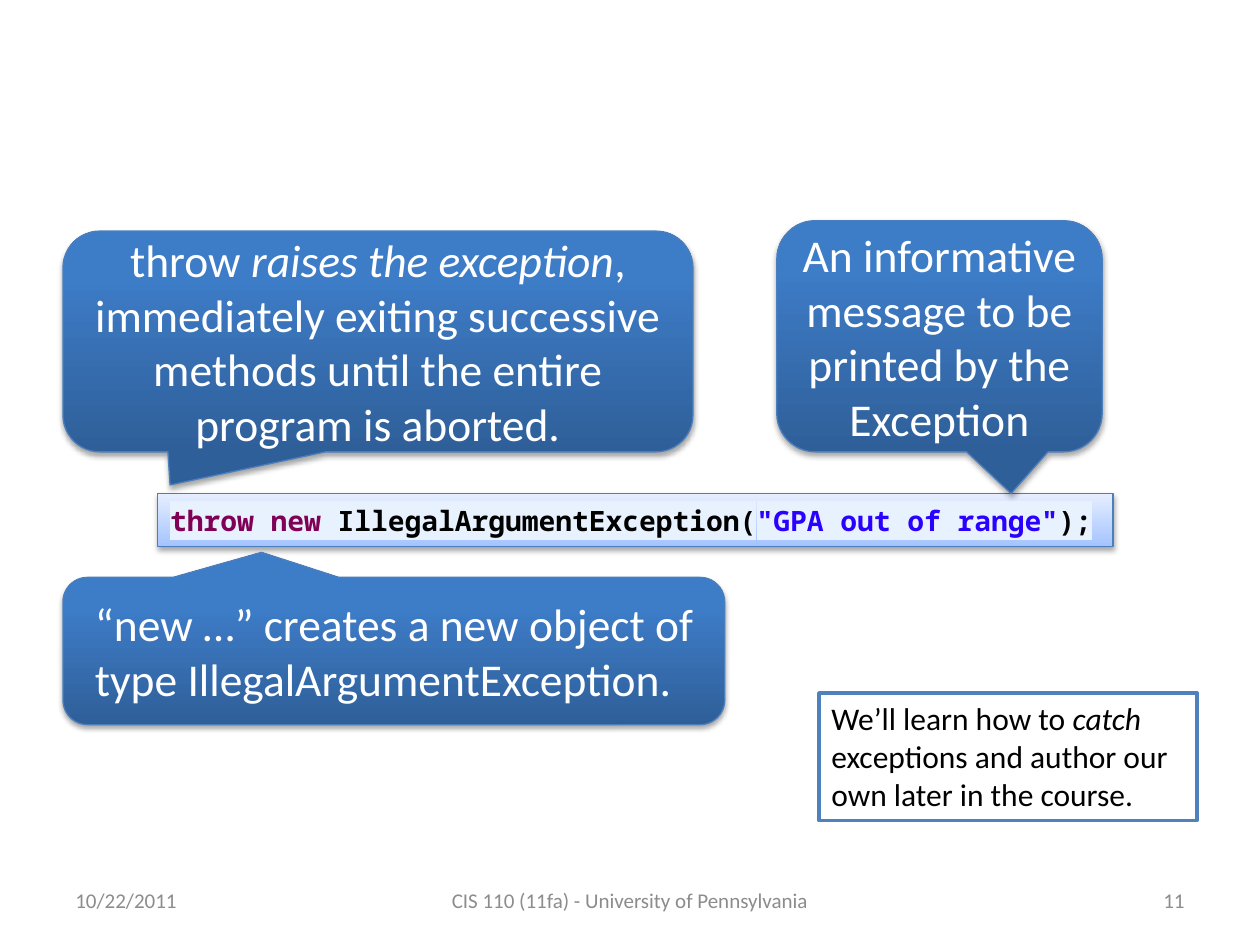
import pptx
import pptx.util
import pptx.dml.color
import pptx.enum.shapes
import pptx.enum.text
import pptx.oxml
import pptx.oxml.ns

Cm = pptx.util.Cm
Pt = pptx.util.Pt
RGB = pptx.dml.color.RGBColor
SHAPE = pptx.enum.shapes.MSO_SHAPE
ALIGN = pptx.enum.text.PP_ALIGN
MIDDLE = pptx.enum.text.MSO_ANCHOR.MIDDLE
TOP = pptx.enum.text.MSO_ANCHOR.TOP

WHITE = RGB(0xFF, 0xFF, 0xFF)
BLACK = RGB(0x00, 0x00, 0x00)
GREY = RGB(0x8C, 0x8C, 0x8C)
EDGE = RGB(0x4B, 0x7E, 0xBC)
FRAME = RGB(0x4F, 0x81, 0xBD)
DEEP = RGB(0x2F, 0x5F, 0x99)
BLUE = RGB(0x3D, 0x7C, 0xC7)
SKY = RGB(0xA4, 0xC4, 0xFF)
PALE = RGB(0xE6, 0xEE, 0xFF)
MARK = RGB(0xE8, 0xF2, 0xFE)
KEYWORD = RGB(0x7F, 0x00, 0x55)
STRING = RGB(0x2A, 0x00, 0xFF)

SANS = "Calibri"
MONO = "Noto Sans Mono"


def set_style(para, font, size, color, align=ALIGN.LEFT):
    para.alignment = align
    para.font.name = font
    para.font.size = Pt(size)
    para.font.color.rgb = color


def add_runs(para, parts):
    """Add the parts as runs, with every second one in italics."""
    for i, part in enumerate(parts):
        run = para.add_run()
        run.text = part
        if i % 2:
            run.font.italic = True


def add_shadow(shape):
    shape.shadow.inherit = False
    effects = shape._element.spPr.find(pptx.oxml.ns.qn("a:effectLst"))
    effects.append(pptx.oxml.parse_xml(
        f'<a:outerShdw {pptx.oxml.ns.nsdecls("a")} blurRad="40000" '
        'dist="23000" dir="5400000" rotWithShape="0"><a:srgbClr val="000000">'
        '<a:alpha val="35000"/></a:srgbClr></a:outerShdw>'))


def add_panel(slide, kind, box, low, high, stop):
    """Add a shape shaded from low at its foot to high at the stop."""
    shape = slide.shapes.add_shape(kind, *map(Cm, box))
    shape.fill.gradient()
    shape.fill.gradient_angle = 90
    stops = shape.fill.gradient_stops
    for mark, color, place in zip(stops, (low, high), (0, stop)):
        mark.color.rgb = color
        mark.position = place
    shape.line.color.rgb = EDGE
    shape.line.width = Pt(0.75)
    add_shadow(shape)
    shape.text_frame.word_wrap = True
    shape.text_frame.vertical_anchor = MIDDLE
    return shape


def add_callout(slide, box, tip, parts, align=ALIGN.CENTER):
    shape = add_panel(slide, SHAPE.ROUNDED_RECTANGULAR_CALLOUT, box,
                      DEEP, BLUE, 0.8)
    for i, value in enumerate(tip):
        shape.adjustments[i] = value
    para = shape.text_frame.paragraphs[0]
    set_style(para, SANS, 26, WHITE, align)
    add_runs(para, parts)
    return shape


def add_code(slide, box, parts):
    shape = add_panel(slide, SHAPE.RECTANGLE, box, SKY, PALE, 1)
    para = shape.text_frame.paragraphs[0]
    set_style(para, MONO, 16, BLACK)
    para.font.bold = True
    for text, color in parts:
        run = para.add_run()
        run.text = text
        run.font.color.rgb = color
        fill = run.font._element.find(pptx.oxml.ns.qn("a:solidFill"))
        fill.addnext(pptx.oxml.parse_xml(
            f'<a:highlight {pptx.oxml.ns.nsdecls("a")}>'
            f'<a:srgbClr val="{MARK}"/></a:highlight>'))


def add_note(slide, box, parts):
    shape = slide.shapes.add_shape(SHAPE.RECTANGLE, *map(Cm, box))
    shape.shadow.inherit = False
    shape.fill.solid()
    shape.fill.fore_color.rgb = WHITE
    shape.line.color.rgb = FRAME
    shape.line.width = Pt(2)
    frame = shape.text_frame
    frame.word_wrap = True
    frame.vertical_anchor = TOP
    set_style(frame.paragraphs[0], SANS, 18, BLACK)
    add_runs(frame.paragraphs[0], parts)


def add_footer(slide, left, width, text, align):
    box = slide.shapes.add_textbox(Cm(left), Cm(17.65), Cm(width), Cm(1.01))
    frame = box.text_frame
    frame.word_wrap = True
    frame.vertical_anchor = MIDDLE
    set_style(frame.paragraphs[0], SANS, 12, GREY, align)
    add_runs(frame.paragraphs[0], [text])


def main():
    deck = pptx.Presentation()
    deck.slide_width, deck.slide_height = Cm(25.4), Cm(19.05)
    slide = deck.slides.add_slide(deck.slide_layouts[6])

    add_code(slide, (3.18, 9.95, 19.26, 1.07), [
        ("throw", KEYWORD), (" ", BLACK), ("new", KEYWORD),
        (" IllegalArgumentException(", BLACK),
        ('"GPA out of range"', STRING), (");", BLACK)])

    add_footer(slide, 1.27, 5.93, "10/22/2011", ALIGN.LEFT)
    add_footer(slide, 8.68, 8.04, "CIS 110 (11fa) - University of Pennsylvania",
               ALIGN.CENTER)
    add_footer(slide, 18.2, 5.93, "11", ALIGN.RIGHT)

    create = add_callout(
        slide, (1.27, 11.64, 13.34, 2.97), (-0.2, -0.67),
        ["“new …” creates a new object of type IllegalArgumentException."],
        ALIGN.LEFT)
    create.text_frame.margin_left = Cm(0.5)
    add_callout(slide, (1.27, 4.66, 12.7, 4.45), (-0.33, 0.65), [
        "throw ", "raises the exception",
        ", immediately exiting successive methods until the entire "
        "program is aborted."])
    add_callout(slide, (15.66, 4.45, 6.56, 4.66), (0.22, 0.68), [
        "An informative message to be printed by the Exception"])

    add_note(slide, (16.51, 13.97, 7.62, 2.57), [
        "We’ll learn how to ", "catch",
        " exceptions and author our own later in the course."])

    deck.save("out.pptx")


if __name__ == "__main__":
    main()
